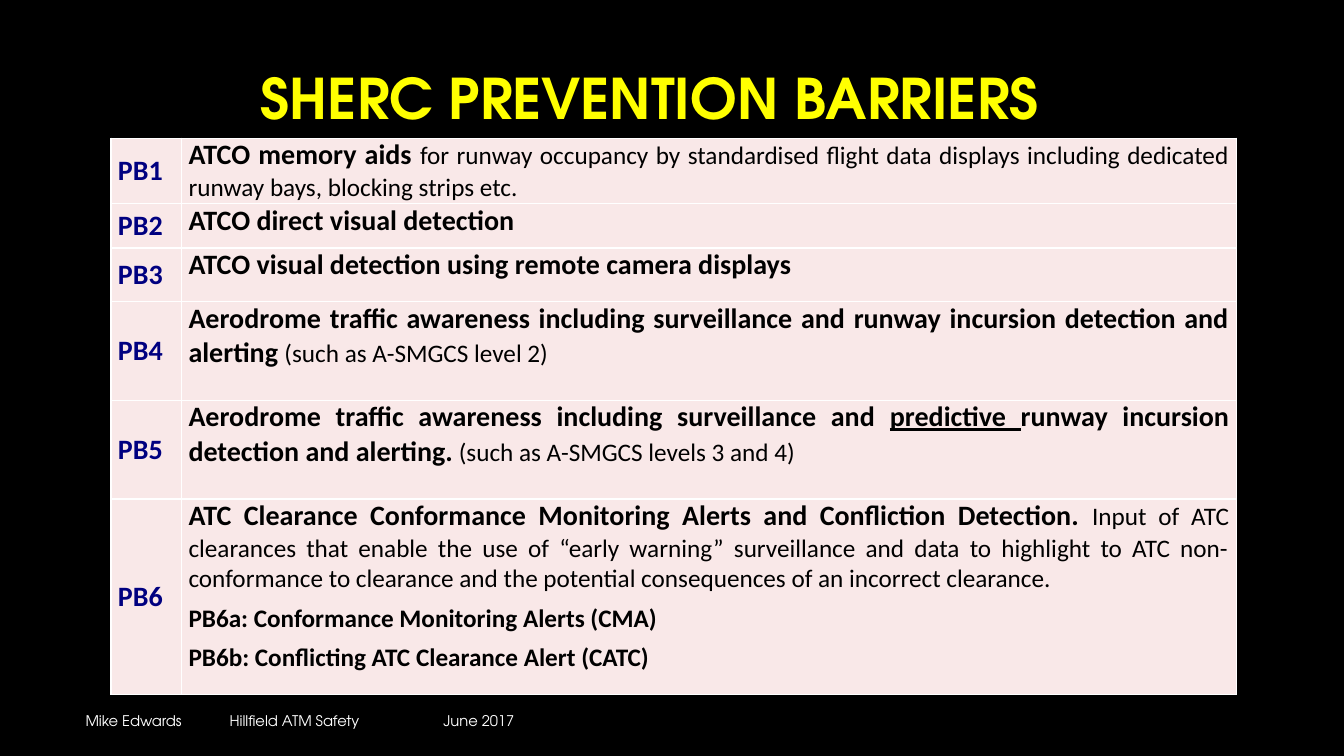
from typing import NamedTuple

from lxml import etree
from pptx import Presentation, util as u
from pptx.dml import color
from pptx.enum import text
from pptx.oxml import ns

YELLOW, WHITE, BLACK = "FFFF00", "FFFFFF", "000000"
NAVY, PINK = "000080", "F9E8E8"
HEAD_FONT, BODY_FONT = "TeX Gyre Adventor", "Calibri"


class Run(NamedTuple):
    words: str
    size: float = 20
    bold: bool = True
    under: bool = False
    hue: str = BLACK
    face: str = BODY_FONT


class Row(NamedTuple):
    code: str
    height: float
    paras: list[list[Run]]


def plain(words: str) -> Run:
    return Run(words, 18, False)


ROWS = [
    Row("PB1", 0.65, [[
        Run("ATCO memory aids "),
        plain("for runway occupancy by standardised flight data displays "
              "including dedicated runway bays, blocking strips etc.")]]),
    Row("PB2", 0.44, [[Run("ATCO direct visual detection")]]),
    Row("PB3", 0.53, [[
        Run("ATCO visual detection using remote camera displays")]]),
    Row("PB4", 0.98, [[
        Run("Aerodrome traffic awareness including surveillance and runway "
            "incursion detection and alerting "),
        plain("(such as A-SMGCS level 2)")]]),
    Row("PB5", 0.98, [[
        Run("Aerodrome traffic awareness including surveillance and "),
        Run("predictive ", under=True),
        Run("runway incursion detection and alerting."),
        plain(" (such as A-SMGCS levels 3 and 4)")]]),
    Row("PB6", 1.94, [
        [Run("ATC Clearance Conformance Monitoring Alerts and Confliction "
             "Detection. "),
         plain("Input of ATC clearances that enable the use of “early "
               "warning” surveillance and data to highlight to ATC "
               "non-conformance to clearance and the potential consequences "
               "of an incorrect clearance.")],
        [Run("PB6a: Conformance Monitoring Alerts (CMA)", 18)],
        [Run("PB6b: Conflicting ATC Clearance Alert (CATC)", 18)]]),
]


def rgb(code: str) -> color.RGBColor:
    return color.RGBColor.from_string(code)


def apply(item, values: dict) -> None:
    for name, value in values.items():
        setattr(item, name, value)


def write(frame, paras: list[list[Run]], form: dict) -> None:
    for i, runs in enumerate(paras):
        para = frame.add_paragraph() if i else frame.paragraphs[0]
        apply(para, form)
        if i:
            para.space_before = u.Pt(3)
        for run in runs:
            part = para.add_run()
            part.text = run.words
            apply(part.font, {"name": run.face, "size": u.Pt(run.size),
                              "bold": run.bold, "underline": run.under})
            part.font.color.rgb = rgb(run.hue)


def add_text(slide, box: tuple, run: Run, form: dict):
    frame = slide.shapes.add_textbox(*map(u.Inches, box)).text_frame
    apply(frame, {"word_wrap": True,
                  "vertical_anchor": text.MSO_ANCHOR.MIDDLE})
    write(frame, [[run]], form)
    return frame


def set_tabs(para, stops: list[float]) -> None:
    tabs = etree.SubElement(para._p.get_or_add_pPr(), ns.qn("a:tabLst"))
    for stop in stops:
        etree.SubElement(tabs, ns.qn("a:tab"), pos=str(u.Inches(stop)),
                         algn="l")


def add_edges(cell) -> None:
    props = cell._tc.get_or_add_tcPr()
    for i, side in enumerate(("lnL", "lnR", "lnT", "lnB")):
        line = etree.Element(ns.qn(f"a:{side}"), w=str(u.Pt(1)))
        fill = etree.SubElement(line, ns.qn("a:solidFill"))
        etree.SubElement(fill, ns.qn("a:srgbClr"), val=WHITE)
        props.insert(i, line)


def fill_cell(cell, paras: list[list[Run]], anchor, align) -> None:
    apply(cell, {"margin_left": u.Inches(0.07),
                 "margin_right": u.Inches(0.07),
                 "margin_top": 0, "margin_bottom": 0,
                 "vertical_anchor": anchor})
    cell.fill.solid()
    cell.fill.fore_color.rgb = rgb(PINK)
    add_edges(cell)
    write(cell.text_frame, paras,
          {"alignment": align, "space_after": u.Pt(3)})


def add_grid(slide) -> None:
    widths = (0.7, 10.46)
    box = (1.1, 1.37, sum(widths), sum(row.height for row in ROWS))
    grid = slide.shapes.add_table(len(ROWS), len(widths),
                                  *map(u.Inches, box)).table
    apply(grid, {"first_row": False, "horz_banding": False})
    for col, width in zip(grid.columns, widths):
        col.width = u.Inches(width)
    for i, row in enumerate(ROWS):
        grid.rows[i].height = u.Inches(row.height)
        fill_cell(grid.cell(i, 0), [[Run(row.code, hue=NAVY)]],
                  text.MSO_ANCHOR.MIDDLE, text.PP_ALIGN.LEFT)
        fill_cell(grid.cell(i, 1), row.paras,
                  text.MSO_ANCHOR.TOP, text.PP_ALIGN.JUSTIFY)


def main() -> None:
    deck = Presentation()
    apply(deck, {"slide_width": u.Inches(13.33),
                 "slide_height": u.Inches(7.5)})
    slide = deck.slides.add_slide(deck.slide_layouts[6])
    slide.background.fill.solid()
    slide.background.fill.fore_color.rgb = rgb(BLACK)

    # Title
    add_text(slide, (1.81, 0.55, 9.27, 0.91),
             Run("SHERC PREVENTION BARRIERS", 40, hue=YELLOW, face=HEAD_FONT),
             {"alignment": text.PP_ALIGN.CENTER, "line_spacing": 0.9})

    # Footer
    foot = add_text(slide, (0.75, 6.95, 8.5, 0.4),
                    Run("Mike Edwards\tHillfield ATM Safety\tJune 2017", 10.5,
                        False, hue=WHITE, face=HEAD_FONT),
                    {"alignment": text.PP_ALIGN.LEFT})
    set_tabs(foot.paragraphs[0], [1.43, 3.55])

    # Barrier table
    add_grid(slide)
    deck.save("out.pptx")


if __name__ == "__main__":
    main()
